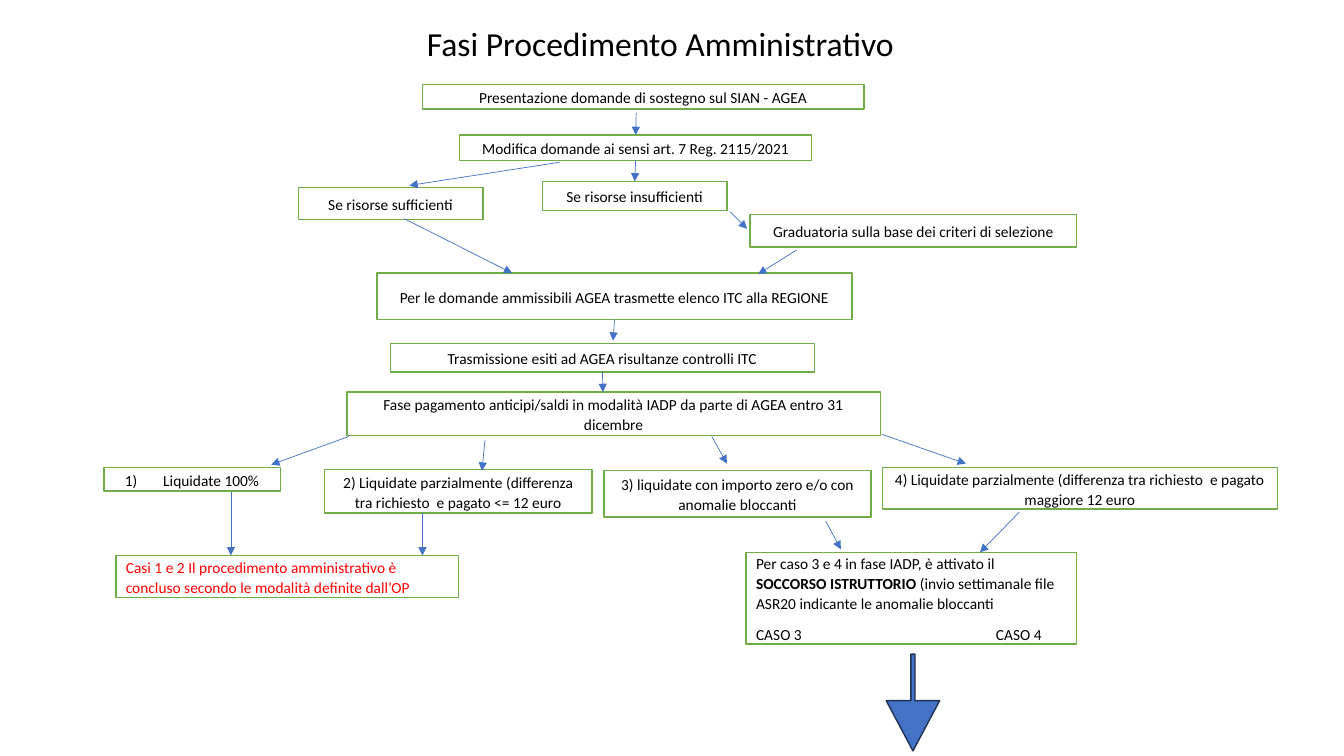
"""Build the flow chart slide of the administrative procedure."""
from lxml import etree
from pptx import Presentation
from pptx.dml.color import RGBColor
from pptx.enum import shapes, text
from pptx.oxml.ns import qn
from pptx.util import Inches, Pt

CENTER, LEFT = text.PP_ALIGN.CENTER, text.PP_ALIGN.LEFT
BLACK, BLUE, GREEN = "000000", "4472C4", "70AD47"


def paint(color, value):
    color.rgb = RGBColor.from_string(value)


def style(para, size, value, align):
    para.alignment = align
    para.font.name = "Calibri"
    para.font.size = Pt(size)
    paint(para.font.color, value)


deck = Presentation()
deck.slide_width, deck.slide_height = Inches(13.33), Inches(7.5)
slide = deck.slides.add_slide(deck.slide_layouts[5])

title = slide.shapes.title
title.left, title.top = Inches(1.55), Inches(0.25)
title.width, title.height = Inches(10), Inches(0.46)
frame = title.text_frame
frame.text = "Fasi Procedimento Amministrativo"
frame.auto_size = text.MSO_AUTO_SIZE.NONE
frame.vertical_anchor = text.MSO_ANCHOR.TOP
frame.paragraphs[0].line_spacing = 0.8
style(frame.paragraphs[0], 24, BLACK, CENTER)

steps = {
    "apply": (4.19, 0.84, 4.38, 0.24, "Presentazione domande di sostegno sul SIAN - AGEA"),
    "modify": (4.56, 1.34, 3.49, 0.25, "Modifica domande ai sensi art. 7 Reg. 2115/2021"),
    "enough": (2.96, 1.86, 1.83, 0.32, "Se risorse sufficienti"),
    "short": (5.38, 1.8, 1.83, 0.29, "Se risorse insufficienti"),
    "rank": (7.44, 2.13, 3.24, 0.32, "Graduatoria sulla base dei criteri di selezione"),
    "list": (3.74, 2.71, 4.71, 0.46,
             "Per le domande ammissibili AGEA trasmette elenco ITC alla REGIONE"),
    "results": (3.87, 3.41, 4.21, 0.28, "Trasmissione esiti ad AGEA risultanze controlli ITC"),
    "payment": (3.44, 3.89, 5.29, 0.43,
                "Fase pagamento anticipi/saldi in modalità IADP da parte di AGEA entro 31 dicembre"),
    "case1": (1.03, 4.64, 1.75, 0.23, "Liquidate 100%"),
    "case2": (3.22, 4.66, 2.65, 0.43,
              "2) Liquidate parzialmente (differenza tra richiesto  e pagato <= 12 euro"),
    "case3": (5.99, 4.67, 2.65, 0.46,
              "3) liquidate con importo zero e/o con anomalie bloccanti"),
    "case4": (8.75, 4.64, 3.92, 0.41,
              "4) Liquidate parzialmente (differenza tra richiesto  e pagato maggiore 12 euro"),
    "closed": (1.15, 5.51, 3.4, 0.42,
               "Casi 1 e 2 Il procedimento amministrativo è concluso "
               "secondo le modalità definite dall’OP"),
    "rescue": (7.4, 5.48, 3.28, 0.91,
               "Per caso 3 e 4 in fase IADP, è attivato il |SOCCORSO ISTRUTTORIO"
               "| (invio settimanale file ASR20 indicante le anomalie bloccanti\n"
               "CASO 3\tCASO 4"),
}

boxes = {}
for name, (*area, words) in steps.items():
    box = slide.shapes.add_shape(shapes.MSO_SHAPE.RECTANGLE, *map(Inches, area))
    boxes[name] = box
    box.shadow.inherit = False
    box.fill.solid()
    paint(box.fill.fore_color, "FFFFFF")
    paint(box.line.color, GREEN)
    box.line.width = Pt(1)
    frame = box.text_frame
    frame.word_wrap = True
    frame.vertical_anchor = text.MSO_ANCHOR.MIDDLE
    for i, row in enumerate(words.split("\n")):
        para = frame.add_paragraph() if i else frame.paragraphs[0]
        for j, part in enumerate(row.split("|")):
            run = para.add_run()
            run.text = part
            if j == 1:
                run.font.bold = True
        para.line_spacing = 1.07
        para.space_after = Pt(8)
        props = para._p.get_or_add_pPr()
        if name == "case1":
            props.set("marL", str(Inches(0.38)))
            props.set("indent", str(-Inches(0.38)))
            etree.SubElement(props, qn("a:buFont"), typeface="Calibri")
            etree.SubElement(props, qn("a:buAutoNum"), type="arabicParenR")
        if "\t" in row:
            tabs = etree.SubElement(props, qn("a:tabLst"))
            etree.SubElement(tabs, qn("a:tab"), pos=str(Inches(2.38)), algn="l")
        style(para, 11, "FF0000" if name == "closed" else BLACK,
              LEFT if name in ("closed", "rescue") else CENTER)

arrows = [
    (6.31, 1.12, 6.3, 1.31, None, "modify"),
    (6.28, 1.6, 6.27, 1.79, "modify", "short"),
    (5.55, 1.61, 4.06, 1.84, None, None),
    (4.01, 2.17, 5.08, 2.71, None, None),
    (7.24, 2.1, 7.41, 2.27, None, None),
    (7.9, 2.48, 7.52, 2.72, None, None),
    (6.09, 3.19, 6.08, 3.38, "list", None),
    (5.99, 3.7, 5.98, 3.89, "results", None),
    (4.81, 4.37, 4.78, 4.67, None, None),
    (7.06, 4.33, 7.21, 4.6, None, None),
    (3.46, 4.33, 2.69, 4.61, None, None),
    (8.75, 4.31, 9.58, 4.6, None, None),
    (2.29, 4.88, 2.29, 5.51, None, None),
    (4.19, 5.09, 4.19, 5.51, None, None),
    (8.19, 5.17, 8.34, 5.45, None, None),
    (10.11, 5.08, 9.72, 5.48, None, None),
]
for *ends, start, stop in arrows:
    arrow = slide.shapes.add_connector(shapes.MSO_CONNECTOR.STRAIGHT, *map(Inches, ends))
    if start:
        arrow.begin_connect(boxes[start], 2)
    if stop:
        arrow.end_connect(boxes[stop], 0)
    paint(arrow.line.color, BLUE)
    arrow.line.width = Pt(0.5)
    etree.SubElement(arrow.line._get_or_add_ln(), qn("a:tailEnd"), type="triangle")
    etree.SubElement(arrow._element.spPr, qn("a:effectLst"))

down = slide.shapes.add_shape(shapes.MSO_SHAPE.DOWN_ARROW, Inches(8.79), Inches(6.49),
                              Inches(0.53), Inches(0.96))
down.adjustments[0], down.adjustments[1] = 0.08, 0.94
down.shadow.inherit = False
down.fill.solid()
paint(down.fill.fore_color, BLUE)
paint(down.line.color, "1E3256")
down.line.width = Pt(1)

deck.save("out.pptx")
